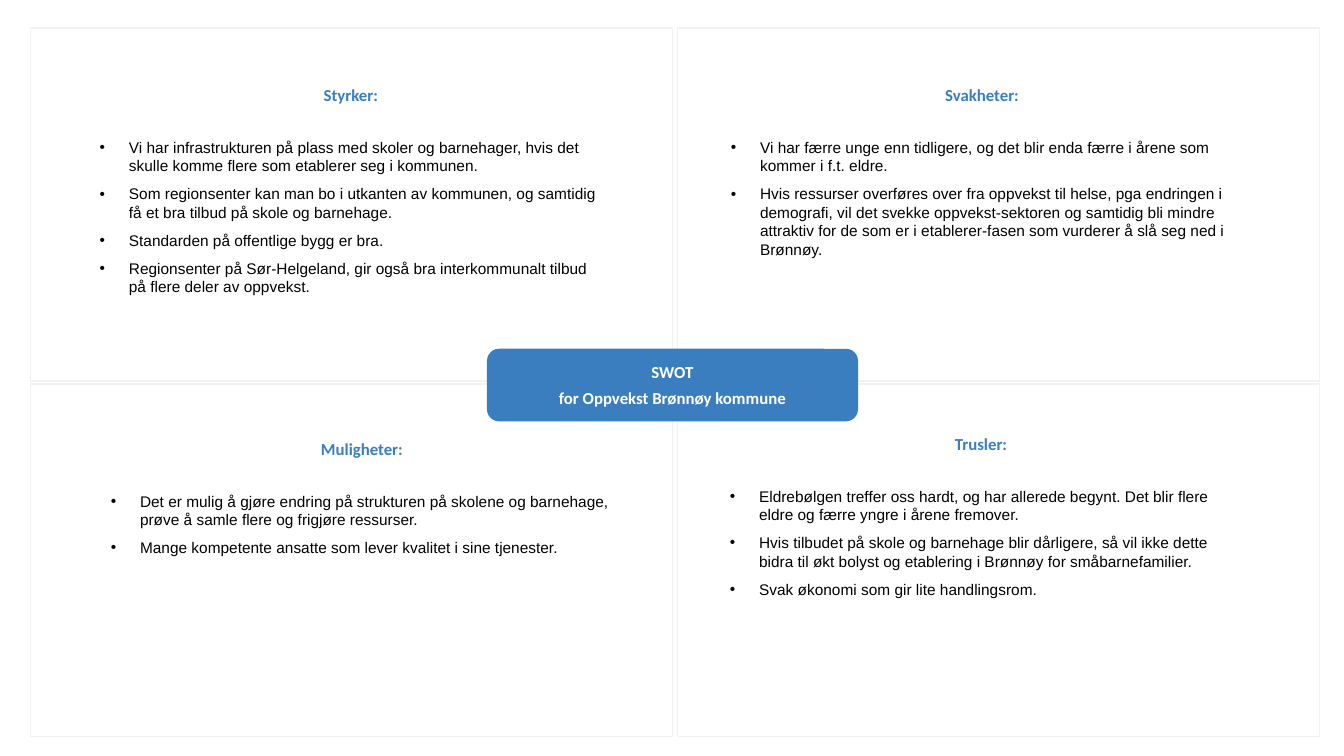
import pptx
import pptx.dml.color
import pptx.enum.shapes
import pptx.enum.text
import pptx.oxml.ns
import pptx.util
from lxml import etree

Inches = pptx.util.Inches
Pt = pptx.util.Pt
SHAPE = pptx.enum.shapes.MSO_SHAPE
ALIGN = pptx.enum.text.PP_ALIGN
BLUE = "3A7EC0"
LEFT, TOP, WIDE, HIGH = 0.3, 0.28, 6.37, 3.5
STEP_X, STEP_Y = 6.42, 3.53

PARTS = [
    (0, 0, 0.59, 0.51, "Styrker:", [
        "Vi har infrastrukturen på plass med skoler og barnehager, hvis det skulle komme flere som etablerer seg i kommunen.",
        "Som regionsenter kan man bo i utkanten av kommunen, og samtidig få et bra tilbud på skole og barnehage.",
        "Standarden på offentlige bygg er bra.",
        "Regionsenter på Sør-Helgeland, gir også bra interkommunalt tilbud på flere deler av oppvekst.",
    ]),
    (1, 0, 0.43, 0.51, "Svakheter:", [
        "Vi har færre unge enn tidligere, og det blir enda færre i årene som kommer i f.t. eldre.",
        "Hvis ressurser overføres over fra oppvekst til helse, pga endringen i demografi, vil det svekke oppvekst-sektoren og samtidig bli mindre attraktiv for de som er i etablerer-fasen som vurderer å slå seg ned i Brønnøy.",
    ]),
    (0, 1, 0.7, 0.49, "Muligheter:", [
        "Det er mulig å gjøre endring på strukturen på skolene og barnehage, prøve å samle flere og frigjøre ressurser.",
        "Mange kompetente ansatte som lever kvalitet i sine tjenester.",
    ]),
    (1, 1, 0.42, 0.44, "Trusler:", [
        "Eldrebølgen treffer oss hardt, og har allerede begynt. Det blir flere eldre og færre yngre i årene fremover.",
        "Hvis tilbudet på skole og barnehage blir dårligere, så vil ikke dette bidra til økt bolyst og etablering i Brønnøy for småbarnefamilier.",
        "Svak økonomi som gir lite handlingsrom.",
    ]),
]


def color(code):
    """Turn a hex string into a colour."""
    return pptx.dml.color.RGBColor.from_string(code)


def style(para, name, size, code, bold=False):
    """Format every run of a paragraph."""
    for run in para.runs:
        run.font.name, run.font.size, run.font.bold = name, Pt(size), bold
        run.font.color.rgb = color(code)


def panel(slide, kind, box, fill, edge=None):
    """Draw a flat filled shape in the given box."""
    shape = slide.shapes.add_shape(kind, *map(Inches, box))
    shape.shadow.inherit = False
    shape.fill.solid()
    shape.fill.fore_color.rgb = color(fill)
    if edge:
        shape.line.color.rgb = color(edge)
        shape.line.width = Pt(1)
    else:
        shape.line.fill.background()


def bullet(para, text):
    """Write one hanging bullet point."""
    para.text = text
    props = para._p.get_or_add_pPr()
    props.set("marL", str(Inches(0.29)))
    props.set("indent", str(-Inches(0.29)))
    para.space_before = para.space_after = Pt(3.4)
    qn = pptx.oxml.ns.qn
    etree.SubElement(props, qn("a:buFont")).set("typeface", "Arial")
    etree.SubElement(props, qn("a:buChar")).set("char", "•")
    style(para, "Arial", 11, "000000")


def part(slide, box, dx, dy, head, points):
    """Place a quadrant with its heading and bullet points."""
    left, top, wide, high = box
    panel(slide, SHAPE.RECTANGLE, box, "FFFFFF", "F2F2F2")
    area = (left + dx, top + dy, 5.18, high - dy - 0.48)
    frame = slide.shapes.add_textbox(*map(Inches, area)).text_frame
    frame.word_wrap = True
    para = frame.paragraphs[0]
    para.text = head
    para.alignment = ALIGN.CENTER
    para.space_after = Pt(20.4)
    style(para, "Calibri", 12, BLUE, True)
    for point in points:
        bullet(frame.add_paragraph(), point)


def badge(slide, box):
    """Place the slide title on a rounded centre badge."""
    panel(slide, SHAPE.ROUNDED_RECTANGLE, box, BLUE)
    title = slide.shapes.title
    slide.shapes._spTree.append(title._element)
    title.left, title.top, title.width, title.height = map(Inches, box)
    frame = title.text_frame
    frame.text = "SWOT\nfor Oppvekst Brønnøy kommune"
    frame.word_wrap = True
    frame.auto_size = pptx.enum.text.MSO_AUTO_SIZE.NONE
    frame.vertical_anchor = pptx.enum.text.MSO_ANCHOR.MIDDLE
    frame.margin_left = frame.margin_right = 0
    for para in frame.paragraphs:
        para.alignment = ALIGN.CENTER
        style(para, "Calibri", 12, "FFFFFF", True)
    frame.paragraphs[1].space_before = Pt(4)


def main():
    """Build and save the slide."""
    deck = pptx.Presentation()
    deck.slide_width, deck.slide_height = Inches(13.33), Inches(7.5)
    slide = deck.slides.add_slide(deck.slide_layouts[5])
    for col, row, dx, dy, head, points in PARTS:
        box = (LEFT + col * STEP_X, TOP + row * STEP_Y, WIDE, HIGH)
        part(slide, box, dx, dy, head, points)
    badge(slide, (4.83, 3.46, 3.68, 0.72))
    deck.save("out.pptx")


if __name__ == "__main__":
    main()
